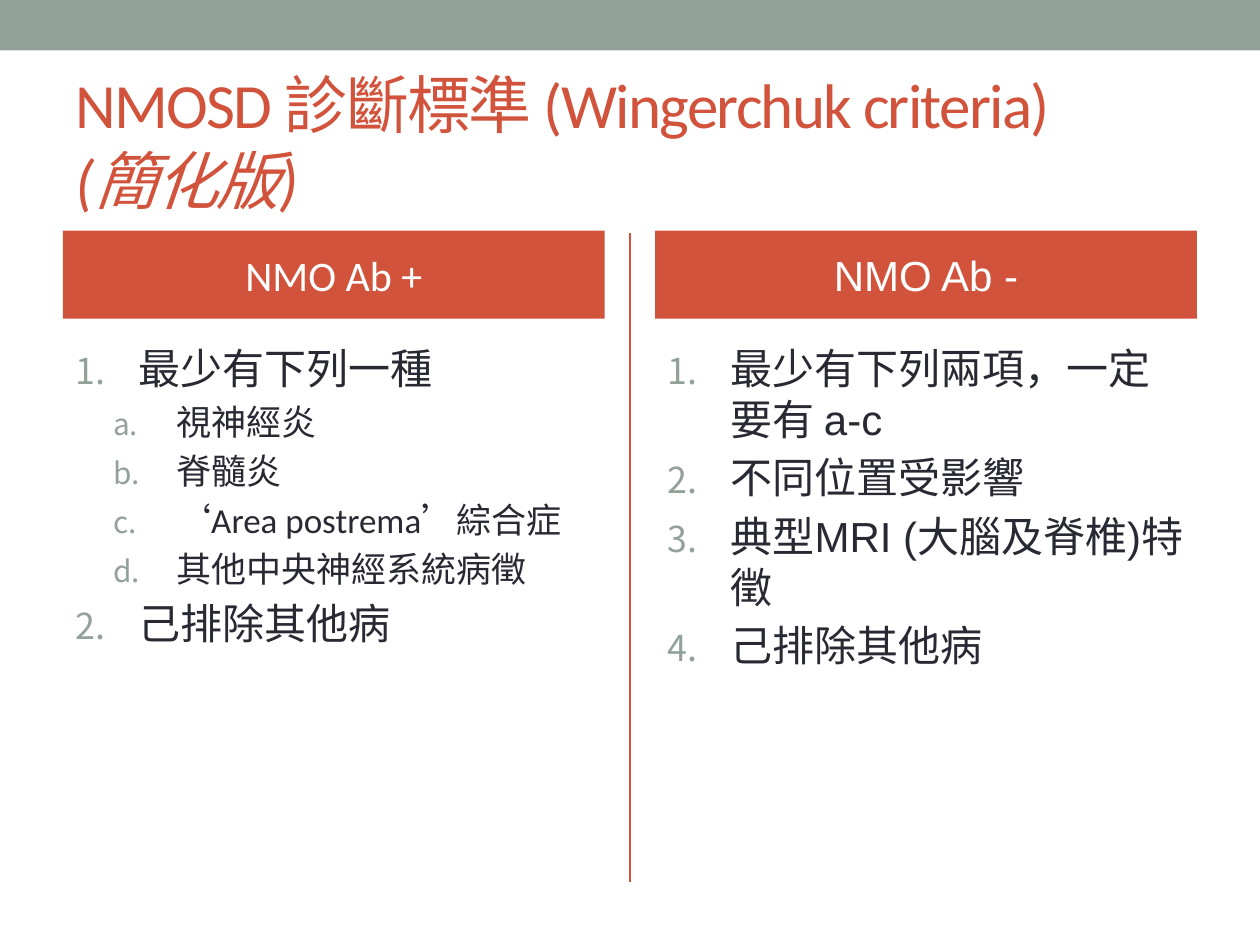
from lxml.etree import SubElement
from pptx import Presentation
from pptx.dml.color import RGBColor
from pptx.enum.shapes import MSO_CONNECTOR, MSO_SHAPE
from pptx.enum.text import MSO_ANCHOR, PP_ALIGN
from pptx.oxml.ns import qn
from pptx.util import Inches, Pt

SAGE = RGBColor(0x93, 0xA2, 0x99)
RED = RGBColor(0xD2, 0x53, 0x3C)
INK = RGBColor(0x29, 0x29, 0x34)
WHITE = RGBColor(0xFF, 0xFF, 0xFF)

TITLE = [("NMOSD 診斷標準 (Wingerchuk criteria)\v", False), ("(簡化版)", True)]
COLUMNS = [
    ("NMO Ab +", "Calibri", [
        (0, "最少有下列一種", "Calibri"),
        (1, "視神經炎", "Calibri"),
        (1, "脊髓炎", "Calibri"),
        (1, "‘Area postrema’綜合症", "Calibri"),
        (1, "其他中央神經系統病徵", "Calibri"),
        (0, "己排除其他病", "Calibri"),
    ]),
    ("NMO Ab -", "Arial", [
        (0, "最少有下列兩項，一定要有 a-c", "Arial"),
        (0, "不同位置受影響", "Arial"),
        (0, "典型MRI (大腦及脊椎)特徵", "Arial"),
        (0, "己排除其他病", "Calibri"),
    ]),
]
LEVELS = [(24, 0.5, "arabicPeriod"), (20, 0.8, "alphaLcPeriod")]
MARGIN, COLUMN_WIDTH, COLUMN_STEP = 0.5, 4.3, 4.7
HEADER_TOP, HEADER_HEIGHT = 1.83, 0.7
LIST_TOP, LIST_HEIGHT = 2.67, 4.32


def add_text(paragraph, text, size=24, font="Calibri", color=INK, italic=None, spacing=None):
    for index, line in enumerate(text.split("\v")):
        if index:
            paragraph.add_line_break()
        if not line:
            continue
        run = paragraph.add_run()
        run.text = line
        run.font.size = Pt(size)
        run.font.name = font
        run.font.color.rgb = color
        run.font.italic = italic
        if spacing is not None:
            run.font._element.set("spc", str(spacing * 100))


def add_block(slide, left, top, width, height, fill):
    block = slide.shapes.add_shape(
        MSO_SHAPE.RECTANGLE, Inches(left), Inches(top), Inches(width), Inches(height))
    block.shadow.inherit = False
    block.fill.solid()
    block.fill.fore_color.rgb = fill
    block.line.fill.background()
    return block


def add_frame(slide, left, top, width, height):
    frame = slide.shapes.add_textbox(
        Inches(left), Inches(top), Inches(width), Inches(height)).text_frame
    frame.word_wrap = True
    return frame


def number_paragraph(paragraph, level, indent, scheme):
    paragraph.level = level
    props = paragraph._p.get_or_add_pPr()
    props.set("marL", str(Inches(indent)))
    props.set("indent", str(Inches(-0.5)))
    SubElement(SubElement(props, qn("a:buClr")), qn("a:srgbClr"), val=str(SAGE))
    SubElement(props, qn("a:buSzPct"), val="85000")
    SubElement(props, qn("a:buFont"), typeface="Calibri")
    SubElement(props, qn("a:buAutoNum"), type=scheme)


def add_divider(slide):
    divider = slide.shapes.add_connector(
        MSO_CONNECTOR.STRAIGHT, Inches(5), Inches(1.85), Inches(5), Inches(7))
    divider.line.color.rgb = RED
    divider.line.width = Pt(1.5)
    SubElement(divider._element.spPr, qn("a:effectLst"))


def add_column(slide, left, heading, heading_font, criteria):
    header = add_block(slide, left, HEADER_TOP, COLUMN_WIDTH, HEADER_HEIGHT, RED).text_frame
    header.vertical_anchor = MSO_ANCHOR.MIDDLE
    label = header.paragraphs[0]
    label.alignment = PP_ALIGN.CENTER
    label.space_before = Pt(4.8)
    add_text(label, heading, font=heading_font, color=WHITE)

    body = add_frame(slide, left, LIST_TOP, COLUMN_WIDTH, LIST_HEIGHT)
    for index, (level, text, font) in enumerate(criteria):
        size, indent, scheme = LEVELS[level]
        criterion = body.add_paragraph() if index else body.paragraphs[0]
        criterion.space_before = Pt(size * 0.2)
        number_paragraph(criterion, level, indent, scheme)
        add_text(criterion, text, size=size, font=font)


def main():
    deck = Presentation()
    deck.slide_width, deck.slide_height = Inches(10), Inches(7.5)
    slide = deck.slides.add_slide(deck.slide_layouts[6])

    add_block(slide, 0, 0, 10, 0.4, SAGE)
    add_divider(slide)
    title = add_frame(slide, MARGIN, 0.58, 9, 1.08)
    title.vertical_anchor = MSO_ANCHOR.MIDDLE
    for text, italic in TITLE:
        add_text(title.paragraphs[0], text, size=36, color=RED, italic=italic, spacing=-1)
    for index, column in enumerate(COLUMNS):
        add_column(slide, MARGIN + index * COLUMN_STEP, *column)

    deck.save("out.pptx")


if __name__ == "__main__":
    main()
